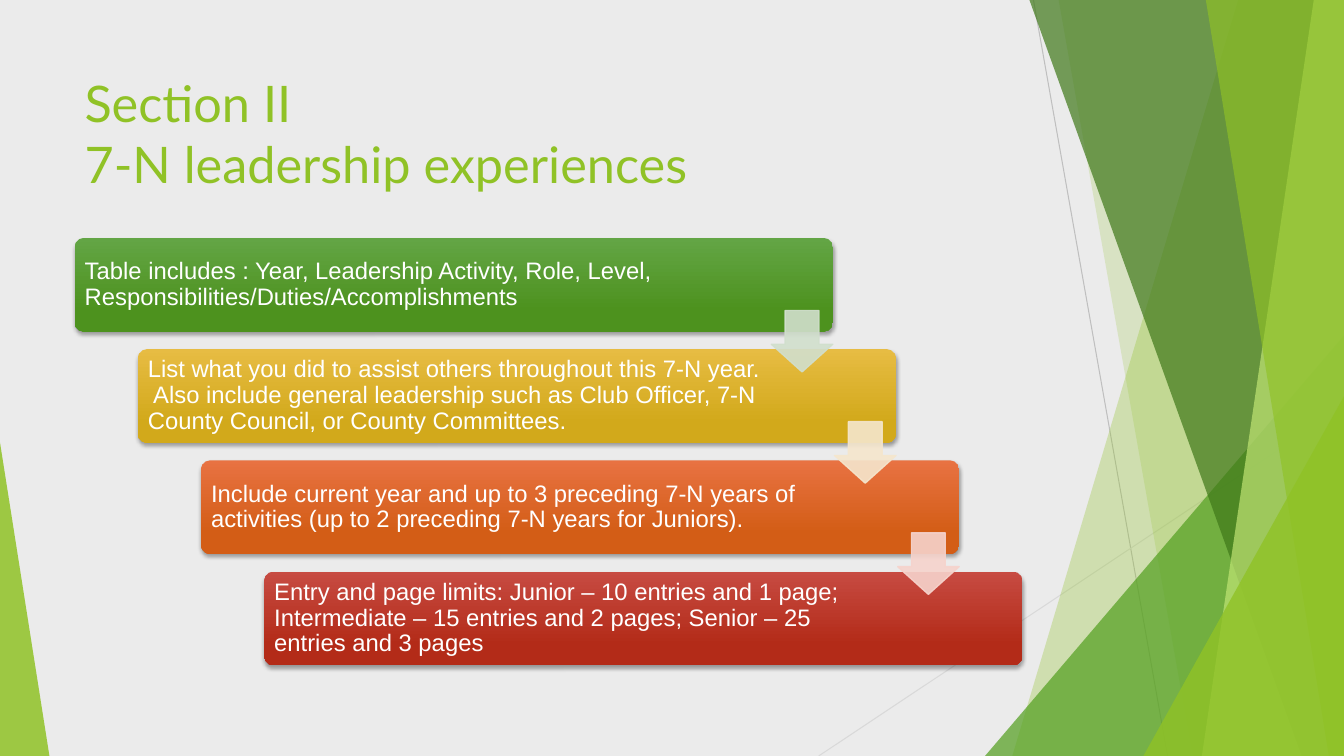
from lxml import etree
from pptx import Presentation
from pptx.dml.color import RGBColor
from pptx.enum.shapes import MSO_CONNECTOR, MSO_SHAPE
from pptx.enum.text import MSO_ANCHOR
from pptx.oxml.ns import qn
from pptx.util import Inches, Pt

STRAIGHT = MSO_CONNECTOR.STRAIGHT
TRIANGLE = MSO_SHAPE.ISOSCELES_TRIANGLE
ROUNDED = MSO_SHAPE.ROUNDED_RECTANGLE
DOWN_ARROW = MSO_SHAPE.DOWN_ARROW
TOP, MIDDLE = MSO_ANCHOR.TOP, MSO_ANCHOR.MIDDLE

WIDTH, HEIGHT = 13.33, 7.5
PAPER = RGBColor(0xEB, 0xEB, 0xEB)
WHITE = RGBColor(0xFF, 0xFF, 0xFF)
LIME = RGBColor(0x90, 0xC2, 0x26)
GREEN = RGBColor(0x54, 0xA0, 0x21)
FOREST = RGBColor(0x3F, 0x78, 0x19)
PALE_LIME = RGBColor(0xC0, 0xE4, 0x74)
GREY = RGBColor(0xBF, 0xBF, 0xBF)
LIGHT_GREY = RGBColor(0xD9, 0xD9, 0xD9)

TITLE = "Section II\v7-N leadership experiences"
# Text, gradient top, gradient bottom, colour of the arrow to the next step
STEPS = [
    ("Table includes : Year, Leadership Activity, Role, Level, "
     "Responsibilities/Duties/Accomplishments",
     RGBColor(0x63, 0xA5, 0x45), RGBColor(0x4D, 0x92, 0x1E), RGBColor(0xD1, 0xDF, 0xCD)),
    ("List what you did to assist others throughout this 7-N year.  Also include general "
     "leadership such as Club Officer, 7-N County Council, or County Committees.",
     RGBColor(0xE7, 0xBC, 0x43), RGBColor(0xD2, 0xA9, 0x1B), RGBColor(0xF5, 0xE6, 0xCD)),
    ("Include current year and up to 3 preceding 7-N years of activities "
     "(up to 2 preceding 7-N years for Juniors).",
     RGBColor(0xE8, 0x72, 0x42), RGBColor(0xD3, 0x5D, 0x16), RGBColor(0xF6, 0xD3, 0xCC)),
    ("Entry and page limits: Junior – 10 entries and 1 page; "
     "Intermediate – 15 entries and 2 pages; Senior – 25 entries and 3 pages",
     RGBColor(0xC7, 0x4B, 0x42), RGBColor(0xB3, 0x2B, 0x18), None),
]


def set_alpha(color_parent, percent):
    color = color_parent.find(".//" + qn("a:srgbClr"))
    etree.SubElement(color, qn("a:alpha"), val=str(percent * 1000))


def paint(shape, color, percent):
    """Fill a shape with a see-through colour, without line or shadow."""
    shape.fill.solid()
    shape.fill.fore_color.rgb = color
    set_alpha(shape.fill._xPr.find(qn("a:solidFill")), percent)
    shape.line.fill.background()
    shape.shadow.inherit = False


def add_preset(page, kind, box, *adjustments):
    shape = page.shapes.add_shape(kind, *map(Inches, box))
    for index, value in enumerate(adjustments):
        shape.adjustments[index] = value
    return shape


def add_text(page, box, text, anchor, margins, font_format, para_format):
    frame = page.shapes.add_textbox(*map(Inches, box)).text_frame
    frame.word_wrap = True
    frame.vertical_anchor = anchor
    (frame.margin_left, frame.margin_top,
     frame.margin_right, frame.margin_bottom) = map(Inches, margins)
    para = frame.paragraphs[0]
    para.text = text
    for name, value in para_format.items():
        setattr(para, name, value)
    for run in para.runs:
        run.font.color.rgb = font_format["color"]
        run.font.name = font_format["name"]
        run.font.size = Pt(font_format["size"])


def add_hairline(page, start, end, color):
    line = page.shapes.add_connector(STRAIGHT, *map(Inches, start + end))
    line.line.color.rgb = color
    line.line.width = Pt(0.75)
    etree.SubElement(line._element.spPr, qn("a:effectLst"))


def add_band(page, top_left, bottom_left, color, percent):
    """Draw a full-height band from a slanted left side to the right edge."""
    corners = [(top_left, 0), (WIDTH, 0), (WIDTH, HEIGHT), (bottom_left, HEIGHT)]
    points = [(Inches(x), Inches(y)) for x, y in corners]
    builder = page.shapes.build_freeform(*points[0], scale=1.0)
    builder.add_line_segments(points[1:], close=True)
    paint(builder.convert_to_shape(), color, percent)


def add_corner(page, left, top, width, peak, color, percent):
    """Draw a right triangle standing on the bottom edge."""
    box = (left, top, width, HEIGHT - top)
    paint(add_preset(page, TRIANGLE, box, peak), color, percent)


def add_backdrop(page):
    page.background.fill.solid()
    page.background.fill.fore_color.rgb = PAPER
    add_hairline(page, (10.25, 0), (11.58, HEIGHT), GREY)
    add_hairline(page, (WIDTH, 4.03), (8.12, HEIGHT), LIGHT_GREY)
    add_band(page, 12.28, 10.04, LIME, 30)
    add_band(page, 10.5, 11.83, LIME, 20)
    add_corner(page, 9.77, 3.33, 3.56, 1, GREEN, 72)
    add_band(page, 10.21, 12.91, FOREST, 70)
    add_band(page, 13.03, 11.92, PALE_LIME, 70)
    add_band(page, 11.96, 13.18, LIME, 65)
    add_corner(page, 11.34, 3.93, 1.99, 1, LIME, 80)
    add_corner(page, 0, 4.39, 0.49, 0, LIME, 85)


def add_card(page, box, top_color, bottom_color):
    card = add_preset(page, ROUNDED, box, 0.1)
    card.fill.gradient()
    card.fill.gradient_angle = 270
    stops = zip(card.fill.gradient_stops, (0, 0.78), (top_color, bottom_color))
    for stop, position, color in stops:
        stop.position = position
        stop.color.rgb = color
    card.line.fill.background()
    card.shadow.inherit = False
    effects = card._element.spPr.find(qn("a:effectLst"))
    shadow = etree.SubElement(effects, qn("a:outerShdw"), blurRad=str(Pt(3)),
                              dist=str(Pt(2)), dir="5400000", rotWithShape="0")
    etree.SubElement(shadow, qn("a:srgbClr"), val="000000")
    set_alpha(shadow, 35)


def add_arrow(page, box, color):
    arrow = add_preset(page, DOWN_ARROW, box, 0.55, 0.45)
    paint(arrow, color, 90)
    arrow.line.color.rgb = color
    arrow.line.width = Pt(1)
    set_alpha(arrow.line._ln, 90)


def add_staircase(page, left, top, width, height):
    """Place the steps evenly from the top left to the bottom right of the box."""
    card_width, card_height, arrow_size, inset = 7.52, 0.93, 0.61, 0.03
    step_x = (width - card_width) / (len(STEPS) - 1)
    step_y = (height - card_height) / (len(STEPS) - 1)
    places = [(left + i * step_x, top + i * step_y) for i in range(len(STEPS))]
    font_format = {"name": "Arial", "size": 17, "color": WHITE}
    for (x, y), (text, top_color, bottom_color, _) in zip(places, STEPS):
        add_card(page, (x, y, card_width, card_height), top_color, bottom_color)
        text_box = (x + inset, y + inset, 6.23, card_height - 2 * inset)
        add_text(page, text_box, text, MIDDLE, [0.07] * 4, font_format,
                 {"line_spacing": 0.9})
    for (x, y), (*_, arrow_color) in zip(places[:-1], STEPS):
        arrow_box = (x + card_width - arrow_size, y + 0.72, arrow_size, arrow_size)
        add_arrow(page, arrow_box, arrow_color)


def main():
    deck = Presentation()
    deck.slide_width, deck.slide_height = Inches(WIDTH), Inches(HEIGHT)
    page = deck.slides.add_slide(deck.slide_layouts[6])
    add_backdrop(page)
    add_text(page, (0.74, 0.67, 9.4, 1.44), TITLE, TOP, (0.1, 0.05, 0.1, 0.05),
             {"name": "Lato", "size": 36, "color": LIME}, {})
    add_staircase(page, 0.74, 2.36, 9.4, 4.24)
    deck.save("out.pptx")


if __name__ == "__main__":
    main()
